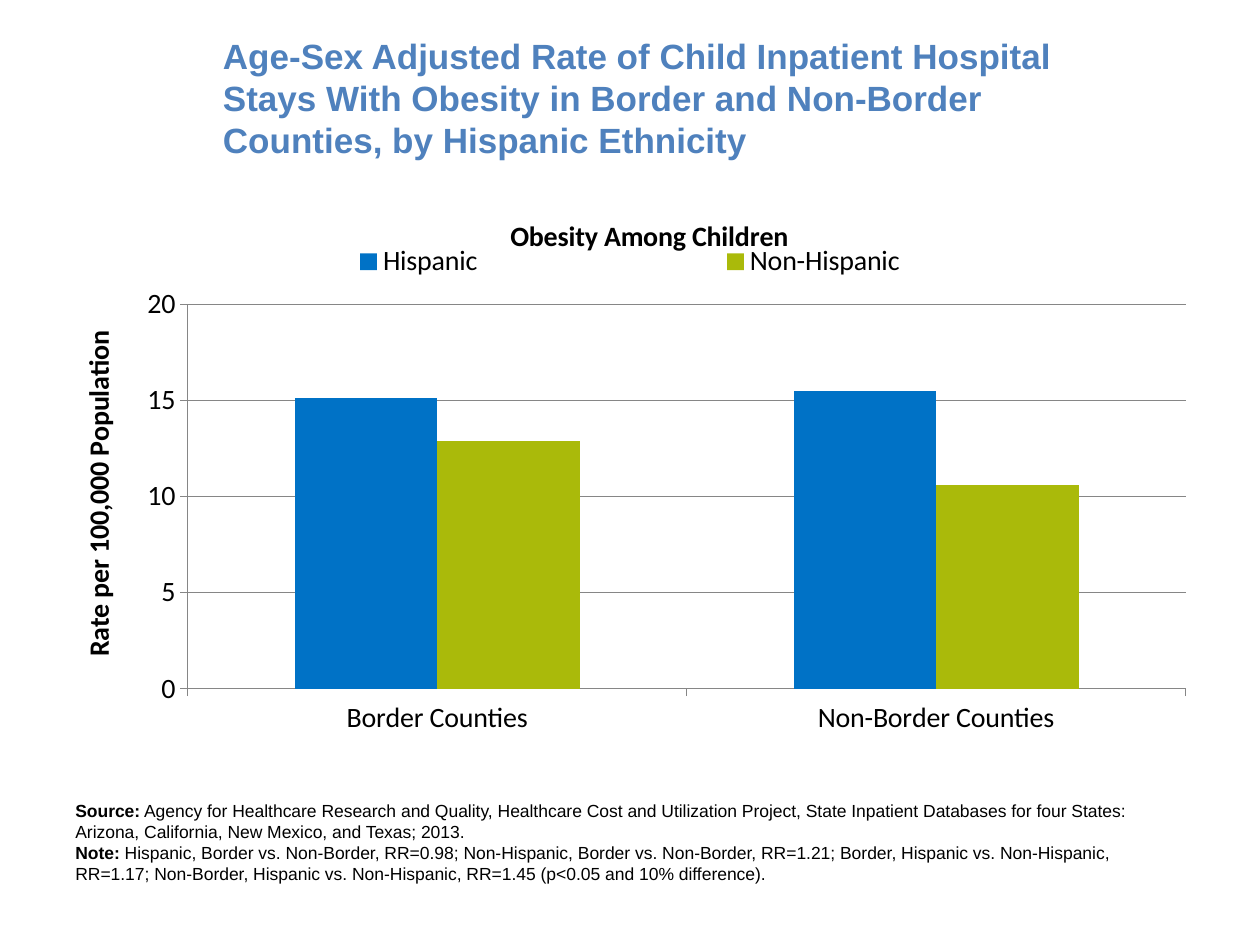
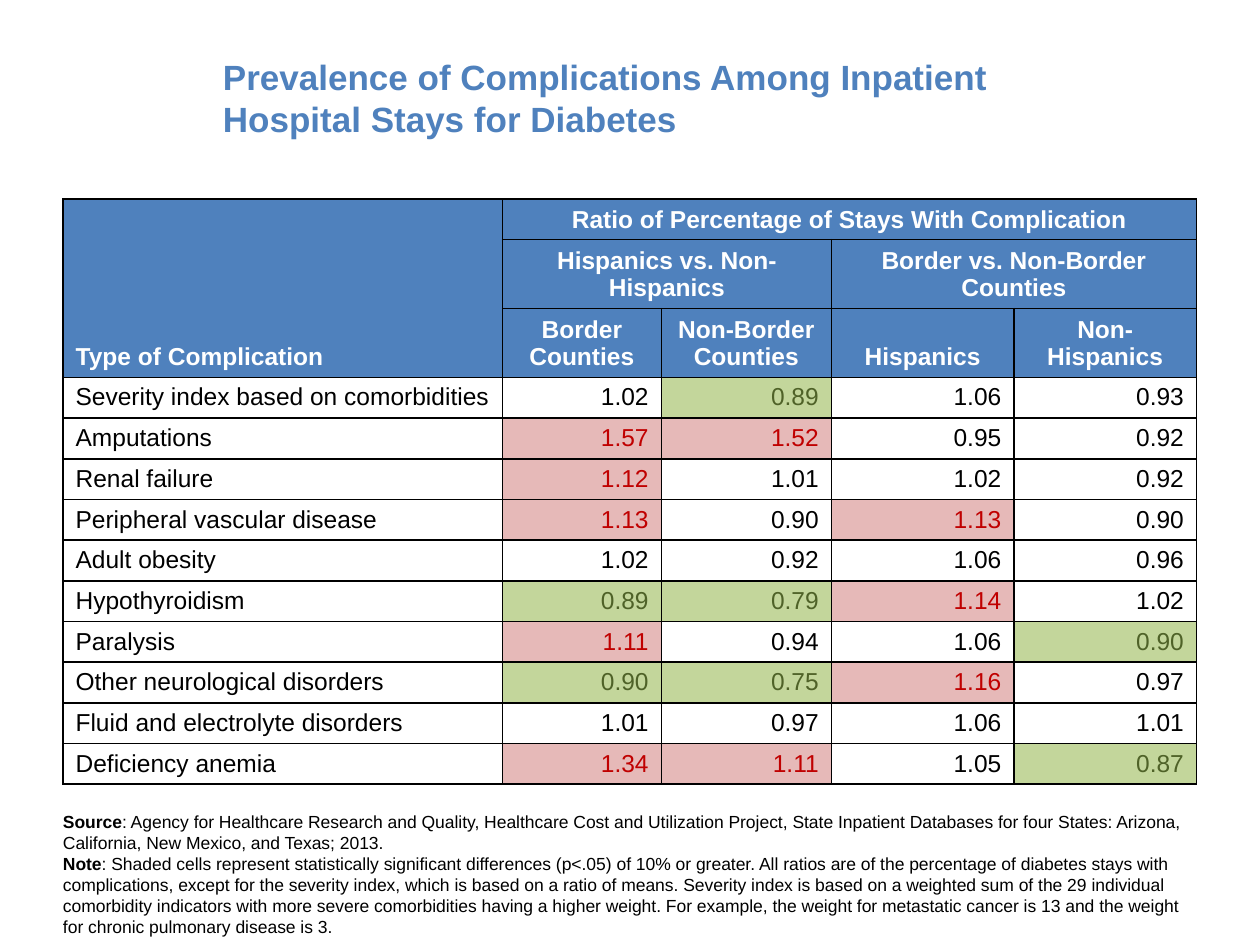
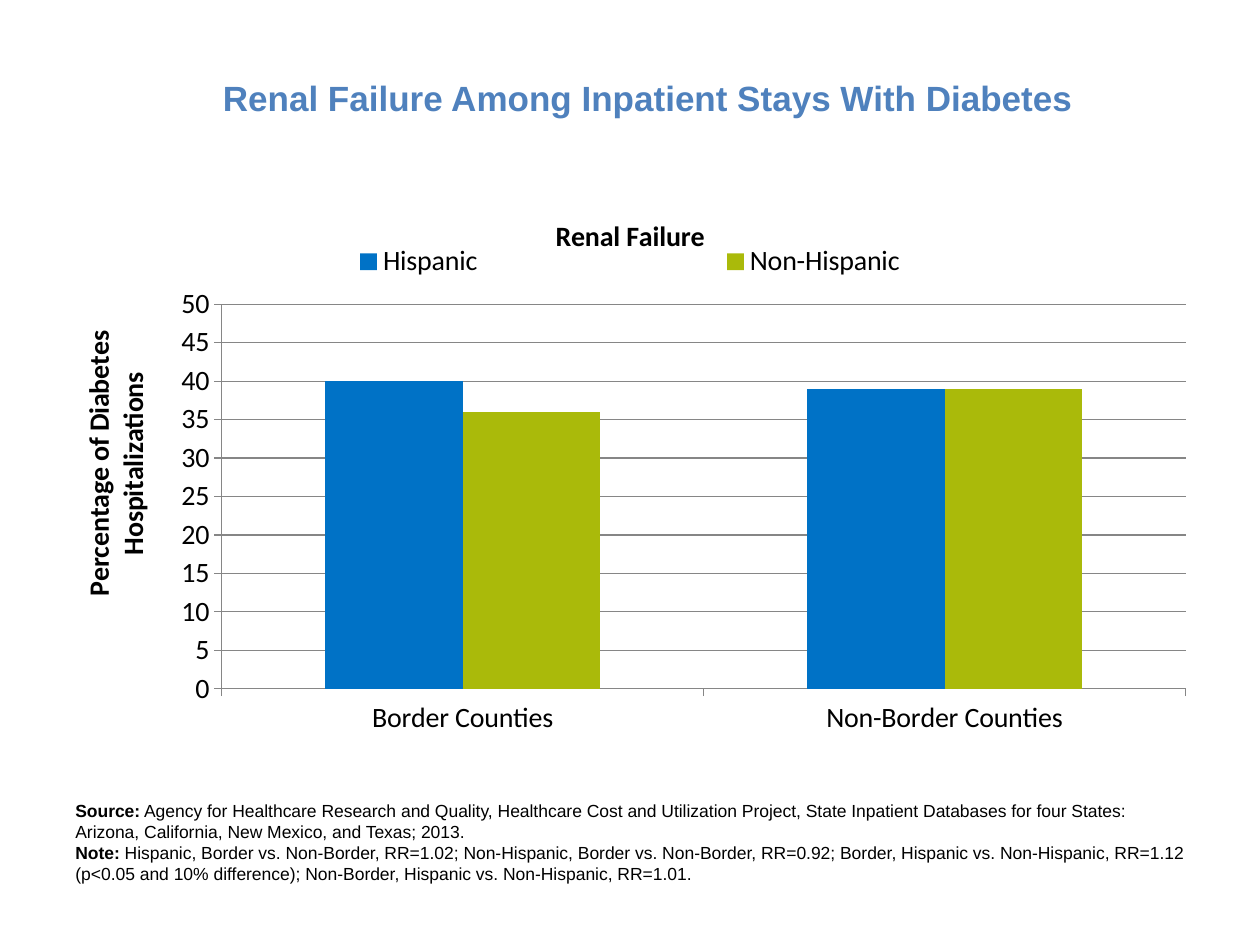
from dataclasses import dataclass

from pptx import Presentation
from pptx.chart.data import CategoryChartData
from pptx.dml.color import RGBColor
from pptx.enum.chart import XL_CHART_TYPE, XL_LEGEND_POSITION, XL_TICK_MARK
from pptx.enum.text import MSO_ANCHOR, MSO_AUTO_SIZE, PP_ALIGN
from pptx.oxml import parse_xml
from pptx.oxml.ns import nsdecls
from pptx.util import Cm, Pt

COLUMN_CLUSTERED = XL_CHART_TYPE.COLUMN_CLUSTERED
LEGEND_TOP = XL_LEGEND_POSITION.TOP
TICK_OUTSIDE = XL_TICK_MARK.OUTSIDE
TICK_NONE = XL_TICK_MARK.NONE
TOP, MIDDLE, BOTTOM = MSO_ANCHOR.TOP, MSO_ANCHOR.MIDDLE, MSO_ANCHOR.BOTTOM
NO_AUTOFIT = MSO_AUTO_SIZE.NONE
LEFT, CENTER, RIGHT = PP_ALIGN.LEFT, PP_ALIGN.CENTER, PP_ALIGN.RIGHT

BLACK, WHITE, BLUE, GRAY = "000000", "FFFFFF", "4F81BD", "868686"
SERIES_COLORS = ("0072C6", "AABA0A")
SHADES = {"H": ("E6B9B8", "C00000"), "L": ("C3D69B", "4F6228"), "-": (None, BLACK)}
TEXT_FONT, CHART_FONT = "Arial", "Calibri"
CHART_SIZE = 16
MARGIN, CONTENT_WIDTH = 1.27, 22.86
COLUMN_WIDTHS = (8.86, 3.2, 3.43, 3.68, 3.68)
HEADER_HEIGHTS = (0.82, 1.39, 1.39)
BODY_HEIGHT = 0.82
COUNTIES = ("Border Counties", "Non-Border Counties")
SOURCE = (
    " Agency for Healthcare Research and Quality, Healthcare Cost and Utilization Project, "
    "State Inpatient Databases for four States: Arizona, California, New Mexico, and Texas; 2013."
)


@dataclass(frozen=True)
class Footnote:
    """Labelled lines below the content."""

    lines: tuple[tuple[str, str], ...]
    top: float = 16.0
    height: float = 1.96
    left_inset: float = 0.25


@dataclass(frozen=True)
class RateChart:
    """A chart comparing ethnic groups in border and non-border counties."""

    title: str
    title_left: float
    axis_title: str
    maximum: float
    plot_left: float
    plot_width: float
    hispanic: tuple[float, float]
    non_hispanic: tuple[float, float]


@dataclass(frozen=True)
class HeaderCell:
    """A heading with its place and span in the table."""

    row: int
    column: int
    lines: tuple[str, ...]
    last_row: int
    last_column: int
    alignment: PP_ALIGN = CENTER


@dataclass(frozen=True)
class Complication:
    """Four ratios, each shaded H for high, L for low or - for plain."""

    label: str
    ratios: str
    shading: str = "----"


HEADERS = (
    HeaderCell(0, 0, ("Type of Complication",), 2, 0, LEFT),
    HeaderCell(0, 1, ("Ratio of Percentage of Stays With Complication",), 0, 4),
    HeaderCell(1, 1, ("Hispanics vs. Non-Hispanics",), 1, 2),
    HeaderCell(1, 3, ("Border vs. Non-Border Counties",), 1, 4),
    HeaderCell(2, 1, ("Border Counties",), 2, 1),
    HeaderCell(2, 2, ("Non-Border", "Counties"), 2, 2),
    HeaderCell(2, 3, ("Hispanics",), 2, 3),
    HeaderCell(2, 4, ("Non-Hispanics",), 2, 4),
)
COMPLICATIONS = (
    Complication("Severity index based on comorbidities", "1.02 0.89 1.06 0.93", "-L--"),
    Complication("Amputations", "1.57 1.52 0.95 0.92", "HH--"),
    Complication("Renal failure", "1.12 1.01 1.02 0.92", "H---"),
    Complication("Peripheral vascular disease", "1.13 0.90 1.13 0.90", "H-H-"),
    Complication("Adult obesity", "1.02 0.92 1.06 0.96"),
    Complication("Hypothyroidism", "0.89 0.79 1.14 1.02", "LLH-"),
    Complication("Paralysis", "1.11 0.94 1.06 0.90", "H--L"),
    Complication("Other neurological disorders", "0.90 0.75 1.16 0.97", "LLH-"),
    Complication("Fluid and electrolyte disorders", "1.01 0.97 1.06 1.01"),
    Complication("Deficiency anemia", "1.34 1.11 1.05 0.87", "HH-L"),
)


def rgb(color: str) -> RGBColor:
    """Turn a hex string into a colour."""
    return RGBColor.from_string(color)


def style_font(font, size: float, color: str = BLACK, bold: bool = False,
               name: str = TEXT_FONT) -> None:
    """Set the look of a font."""
    font.name, font.size, font.bold = name, Pt(size), bold
    font.color.rgb = rgb(color)


def add_run(paragraph, text: str, size: float, color: str = BLACK, bold: bool = False,
            name: str = TEXT_FONT) -> None:
    """Append a formatted run to a paragraph."""
    run = paragraph.add_run()
    run.text = text
    style_font(run.font, size, color, bold, name)


def get_paragraph(text_frame, index: int):
    """Return the first paragraph, or a new one after it."""
    return text_frame.add_paragraph() if index else text_frame.paragraphs[0]


def add_titled_slide(presentation, title: str, title_width: float = 18.85):
    """Add a slide with its title placeholder moved and formatted."""
    slide = presentation.slides.add_slide(presentation.slide_layouts[5])
    shape = slide.shapes.title
    shape.left, shape.top = Cm(4.24), Cm(0.76)
    shape.width, shape.height = Cm(title_width), Cm(2.41)
    text_frame = shape.text_frame
    text_frame.vertical_anchor = MIDDLE
    text_frame.auto_size = NO_AUTOFIT
    paragraph = text_frame.paragraphs[0]
    paragraph.alignment = LEFT
    add_run(paragraph, title, 20, BLUE, True)
    return slide


def add_footnote(slide, footnote: Footnote) -> None:
    """Add the source and note lines."""
    shape = slide.shapes.add_textbox(Cm(MARGIN), Cm(footnote.top), Cm(CONTENT_WIDTH),
                                     Cm(footnote.height))
    text_frame = shape.text_frame
    text_frame.word_wrap = True
    text_frame.margin_left = Cm(footnote.left_inset)
    for index, (label, text) in enumerate(footnote.lines):
        paragraph = get_paragraph(text_frame, index)
        add_run(paragraph, label, 10, bold=True)
        add_run(paragraph, text, 10)


def set_layout(element, after: str | None, target: str = "", **fractions: float) -> None:
    """Place a chart part by fractions of the chart size."""
    for layout in element.xpath("c:layout"):
        element.remove(layout)
    modes = "".join(f'<c:{axis}Mode val="edge"/>' for axis in "xy")
    values = "".join(f'<c:{key} val="{value}"/>' for key, value in fractions.items())
    layout = parse_xml(f"<c:layout {nsdecls('c')}><c:manualLayout>{target}{modes}{values}"
                       "</c:manualLayout></c:layout>")
    if after:
        element.xpath(after)[0].addnext(layout)
    else:
        element.insert(0, layout)


def style_axis(axis) -> None:
    """Set labels, line and ticks of an axis."""
    style_font(axis.tick_labels.font, CHART_SIZE, name=CHART_FONT)
    axis.format.line.color.rgb = rgb(GRAY)
    axis.major_tick_mark = TICK_OUTSIDE
    axis.minor_tick_mark = TICK_NONE


def style_value_axis(axis, rate_chart: RateChart) -> None:
    """Set the scale, gridlines and rotated title of the value axis."""
    axis.minimum_scale, axis.maximum_scale, axis.major_unit = 0, rate_chart.maximum, 5
    axis.has_major_gridlines = True
    axis.major_gridlines.format.line.color.rgb = rgb(GRAY)
    axis.tick_labels.number_format = "#,##0"
    axis.tick_labels.number_format_is_linked = False
    text_frame = axis.axis_title.text_frame
    add_run(text_frame.paragraphs[0], rate_chart.axis_title, CHART_SIZE, bold=True,
            name=CHART_FONT)
    body = axis.axis_title.element.xpath("c:tx/c:rich/a:bodyPr")[0]
    body.set("rot", "-5400000")
    body.set("vert", "horz")


def add_rate_chart(slide, rate_chart: RateChart) -> None:
    """Add a clustered column chart."""
    chart_data = CategoryChartData()
    chart_data.categories = COUNTIES
    chart_data.add_series("Hispanic", rate_chart.hispanic)
    chart_data.add_series("Non-Hispanic", rate_chart.non_hispanic)
    chart = slide.shapes.add_chart(COLUMN_CLUSTERED, Cm(MARGIN), Cm(4.06), Cm(CONTENT_WIDTH),
                                   Cm(10.92), chart_data).chart
    style_font(chart.font, 10)
    chart.has_title = True
    add_run(chart.chart_title.text_frame.paragraphs[0], rate_chart.title, CHART_SIZE, bold=True,
            name=CHART_FONT)
    chart.has_legend = True
    chart.legend.position = LEGEND_TOP
    chart.legend.include_in_layout = False
    style_font(chart.legend.font, CHART_SIZE, name=CHART_FONT)
    plot = chart.plots[0]
    plot.gap_width, plot.overlap, plot.vary_by_categories = 150, 0, False
    for series, color in zip(plot.series, SERIES_COLORS):
        series.format.fill.solid()
        series.format.fill.fore_color.rgb = rgb(color)
    style_axis(chart.category_axis)
    style_axis(chart.value_axis)
    style_value_axis(chart.value_axis, rate_chart)
    set_layout(chart.chart_title.element, "c:tx", x=rate_chart.title_left, y=0.02)
    set_layout(chart.value_axis.axis_title.element, "c:tx", x=0.01, y=0.23)
    set_layout(chart.element.xpath("c:chart/c:legend")[0], "c:legendPos",
               x=0.05, y=0.08, w=0.9, h=0.06)
    set_layout(chart.element.xpath("c:chart/c:plotArea")[0], None,
               '<c:layoutTarget val="inner"/>',
               x=rate_chart.plot_left, y=0.19, w=rate_chart.plot_width, h=0.71)


def add_borders(cell) -> None:
    """Draw a black one-point line on each side of a cell."""
    properties = cell._tc.get_or_add_tcPr()
    for index, side in enumerate("LRTB"):
        properties.insert(index, parse_xml(
            f'<a:ln{side} {nsdecls("a")} w="12700"><a:solidFill><a:srgbClr val="{BLACK}"/>'
            f"</a:solidFill></a:ln{side}>"))


def fill_cell(cell, color: str | None) -> None:
    """Fill a cell, or leave it clear."""
    if color is None:
        cell.fill.background()
    else:
        cell.fill.solid()
        cell.fill.fore_color.rgb = rgb(color)


def write_cell(cell, lines: tuple[str, ...], alignment: PP_ALIGN, fill: str | None,
               color: str = BLACK, bold: bool = False, anchor: MSO_ANCHOR = TOP) -> None:
    """Fill a cell and write one paragraph per line."""
    fill_cell(cell, fill)
    cell.vertical_anchor = anchor
    for index, line in enumerate(lines):
        paragraph = get_paragraph(cell.text_frame, index)
        paragraph.alignment = alignment
        add_run(paragraph, line, 14, color, bold)


def add_complication_table(slide) -> None:
    """Add the table of complication ratios."""
    heights = HEADER_HEIGHTS + (BODY_HEIGHT,) * len(COMPLICATIONS)
    table = slide.shapes.add_table(len(heights), len(COLUMN_WIDTHS), Cm(MARGIN), Cm(4.01),
                                   Cm(CONTENT_WIDTH), Cm(sum(heights))).table
    table.first_row = table.horz_banding = False
    for column, width in zip(table.columns, COLUMN_WIDTHS):
        column.width = Cm(width)
    for row, height in zip(table.rows, heights):
        row.height = Cm(height)
    for cell in table.iter_cells():
        fill_cell(cell, BLUE)
        add_borders(cell)
    for header in HEADERS:
        cell = table.cell(header.row, header.column)
        if (header.row, header.column) != (header.last_row, header.last_column):
            cell.merge(table.cell(header.last_row, header.last_column))
        write_cell(cell, header.lines, header.alignment, BLUE, WHITE, True, BOTTOM)
    for row_index, complication in enumerate(COMPLICATIONS, len(HEADER_HEIGHTS)):
        write_cell(table.cell(row_index, 0), (complication.label,), LEFT, WHITE)
        ratios = zip(complication.ratios.split(), complication.shading)
        for column_index, (ratio, shade) in enumerate(ratios, 1):
            fill, color = SHADES[shade]
            write_cell(table.cell(row_index, column_index), (ratio,), RIGHT, fill, color)


def main() -> None:
    """Build and save the presentation."""
    presentation = Presentation()
    presentation.slide_width, presentation.slide_height = Cm(25.4), Cm(19.05)

    slide = add_titled_slide(
        presentation,
        "Age-Sex Adjusted Rate of Child Inpatient Hospital Stays With Obesity in Border and "
        "Non-Border Counties, by Hispanic Ethnicity")
    add_footnote(slide, Footnote((
        ("Source:", SOURCE),
        ("Note: ", "Hispanic, Border vs. Non-Border, RR=0.98; Non-Hispanic, Border vs. "
         "Non-Border, RR=1.21; Border, Hispanic vs. Non-Hispanic, RR=1.17; Non-Border, "
         "Hispanic vs. Non-Hispanic, RR=1.45 (p<0.05 and 10% difference)."))))
    add_rate_chart(slide, RateChart("Obesity Among Children", 0.39, "Rate per 100,000 Population",
                                    20, 0.11, 0.88, (15.1, 15.5), (12.9, 10.6)))

    slide = add_titled_slide(
        presentation, "Prevalence of Complications Among Inpatient Hospital Stays for Diabetes",
        18.21)
    add_complication_table(slide)
    add_footnote(slide, Footnote((
        ("Source", ":" + SOURCE),
        ("Note", ": Shaded cells represent statistically significant differences (p<.05) of 10% "
         "or greater. All ratios are of the percentage of diabetes stays with complications, "
         "except for the severity index, which is based on a ratio of means. Severity index is "
         "based on a weighted sum of the 29 individual comorbidity indicators with more severe "
         "comorbidities having a higher weight. For example, the weight for metastatic cancer is "
         "13 and the weight for chronic pulmonary disease is 3.")), 16.23, 2.82, 0))

    slide = add_titled_slide(presentation, "Renal Failure Among Inpatient Stays With Diabetes")
    add_footnote(slide, Footnote((
        ("Source:", SOURCE),
        ("Note: ", "Hispanic, Border vs. Non-Border, RR=1.02; Non-Hispanic, Border vs. "
         "Non-Border, RR=0.92; Border, Hispanic vs. Non-Hispanic, RR=1.12 (p<0.05 and 10% "
         "difference); Non-Border, Hispanic vs. Non-Hispanic, RR=1.01."))))
    add_rate_chart(slide, RateChart("Renal Failure", 0.43, "Percentage of Diabetes Hospitalizations",
                                    50, 0.14, 0.85, (40, 39), (36, 39)))

    presentation.save("out.pptx")


if __name__ == "__main__":
    main()
